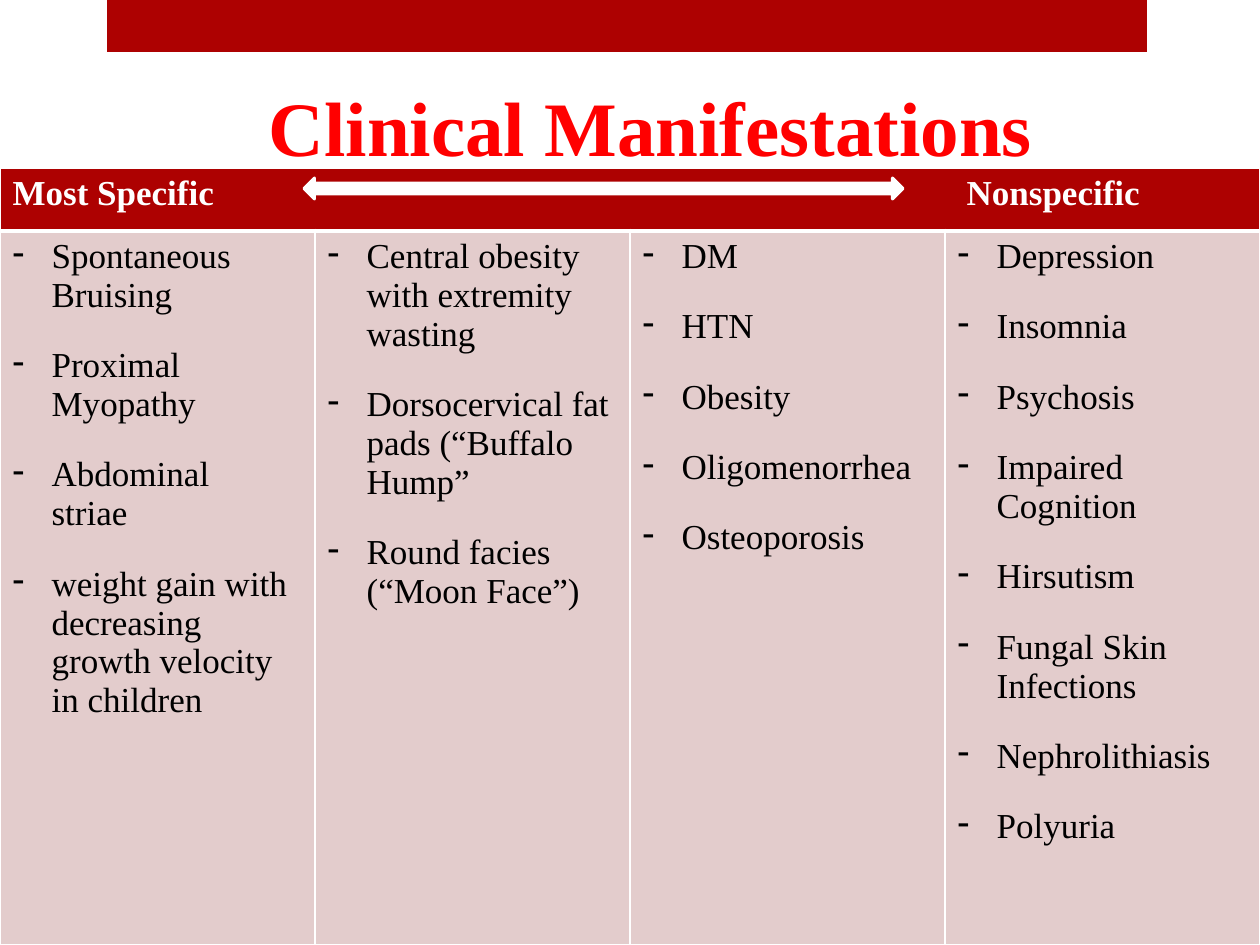
from pptx import Presentation
from pptx import util as u
from pptx.dml.color import RGBColor
from pptx.enum import shapes, text
from pptx.oxml.ns import qn
from lxml import etree

RED = RGBColor(0xAD, 0x01, 0x01)
TITLE_RED = RGBColor(0xFF, 0x00, 0x00)
PINK = RGBColor(0xE3, 0xCC, 0xCC)
WHITE = RGBColor(0xFF, 0xFF, 0xFF)
BLACK = RGBColor(0x00, 0x00, 0x00)

HEADINGS = ("Most Specific", "Nonspecific")
SIGNS = [
    ["Spontaneous Bruising", "Proximal Myopathy", "Abdominal\vstriae",
     "weight gain with decreasing growth velocity in children"],
    ["Central obesity with extremity wasting",
     "Dorsocervical fat pads (“Buffalo Hump”", "Round facies (“Moon Face”)"],
    ["DM", "HTN", "Obesity", "Oligomenorrhea", "Osteoporosis"],
    ["Depression", "Insomnia", "Psychosis", "Impaired Cognition", "Hirsutism",
     "Fungal Skin Infections", "Nephrolithiasis", "Polyuria"],
]


def px(length):
    return u.Emu(round(length * 914400 / 126))


class SlideBuilder:
    font_name = "Times New Roman"
    body_size = 20
    indent = 39

    def __init__(self, slide):
        self.slide = slide

    def style(self, paragraph, size, color, bold=False):
        font = paragraph.font
        font.name = self.font_name
        font.size = u.Pt(size)
        font.bold = bold
        font.color.rgb = color

    def shape(self, kind, left, top, width, height, fill, line_width=0):
        shape = self.slide.shapes.add_shape(
            kind, px(left), px(top), px(width), px(height))
        shape.shadow.inherit = False
        shape.fill.solid()
        shape.fill.fore_color.rgb = fill
        if line_width:
            shape.line.color.rgb = fill
            shape.line.width = u.Pt(line_width)
        else:
            shape.line.fill.background()

    def title(self, wording, left, top, width, height):
        box = self.slide.shapes.add_textbox(px(left), px(top), px(width), px(height))
        frame = box.text_frame
        frame.word_wrap = True
        frame.vertical_anchor = text.MSO_ANCHOR.BOTTOM
        paragraph = frame.paragraphs[0]
        paragraph.text = wording
        paragraph.alignment = text.PP_ALIGN.CENTER
        self.style(paragraph, 44, TITLE_RED, bold=True)

    def cell(self, cell, fill, bottom_width=1):
        properties = cell._tc.get_or_add_tcPr()
        for side, width in (("L", 1), ("R", 1), ("T", 1), ("B", bottom_width)):
            line = etree.SubElement(properties, qn(f"a:ln{side}"), w=str(u.Pt(width)))
            solid = etree.SubElement(line, qn("a:solidFill"))
            etree.SubElement(solid, qn("a:srgbClr"), val=str(WHITE))
        cell.fill.solid()
        cell.fill.fore_color.rgb = fill

    def heading(self, cell, wordings, tab):
        paragraph = cell.text_frame.paragraphs[0]
        paragraph.text = "\t".join(wordings)
        tabs = etree.SubElement(paragraph._p.get_or_add_pPr(), qn("a:tabLst"))
        etree.SubElement(tabs, qn("a:tab"), pos=str(px(tab)), algn="l")
        self.style(paragraph, self.body_size, WHITE, bold=True)

    def bullets(self, cell, items):
        frame = cell.text_frame
        for index, item in enumerate(items):
            paragraph = frame.add_paragraph() if index else frame.paragraphs[0]
            paragraph.text = item
            properties = paragraph._p.get_or_add_pPr()
            properties.set("marL", str(px(self.indent)))
            properties.set("indent", str(-px(self.indent)))
            etree.SubElement(properties, qn("a:buChar"), char="-")
            paragraph.space_before = u.Pt(6)
            paragraph.space_after = u.Pt(12)
            self.style(paragraph, self.body_size, BLACK)

    def table(self, headings, columns, left, top, width, row_heights, tab):
        table = self.slide.shapes.add_table(
            2, len(columns), px(left), px(top), px(width), px(sum(row_heights))).table
        for row, height in zip(table.rows, row_heights):
            row.height = px(height)
        for index, items in enumerate(columns):
            table.columns[index].width = px(width / len(columns))
            self.cell(table.cell(0, index), RED, bottom_width=3)
            self.cell(table.cell(1, index), PINK)
            self.bullets(table.cell(1, index), items)
        table.cell(0, 0).merge(table.cell(0, len(columns) - 1))
        self.heading(table.cell(0, 0), headings, tab)


def main():
    presentation = Presentation()
    presentation.slide_width = px(1260)
    presentation.slide_height = px(945)
    builder = SlideBuilder(presentation.slides.add_slide(presentation.slide_layouts[6]))
    for top, height in ((0, 52), (850, 4)):
        builder.shape(shapes.MSO_SHAPE.RECTANGLE, 107, top, 1040, height, RED)
    builder.title("Clinical Manifestations", 42, 42, 1218, 136)
    builder.table(HEADINGS, SIGNS, 0, 168, 1260, (63, 714), 954)
    builder.shape(shapes.MSO_SHAPE.LEFT_RIGHT_ARROW, 304, 178, 599, 21, WHITE, 1.75)
    presentation.save("out.pptx")


if __name__ == "__main__":
    main()
